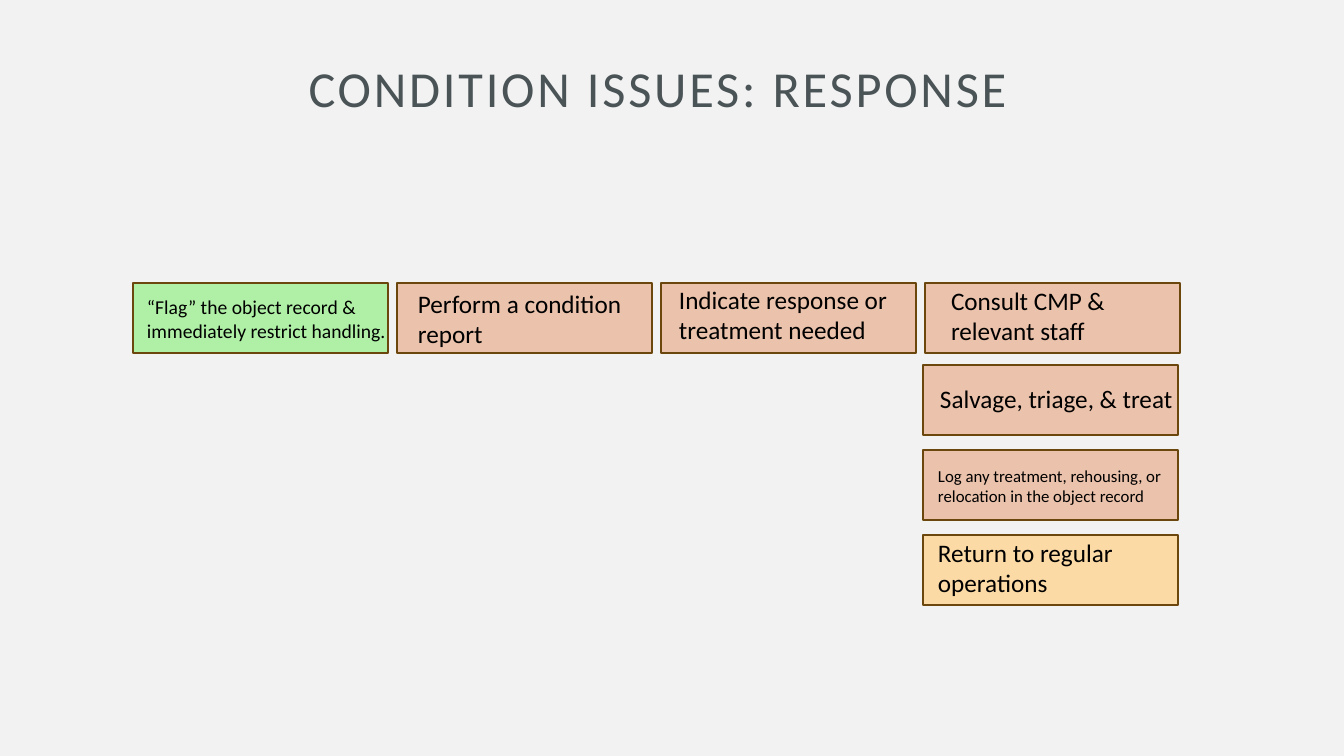
from dataclasses import dataclass

from pptx import Presentation
from pptx.dml.color import RGBColor
from pptx.enum.shapes import MSO_SHAPE
from pptx.enum.text import MSO_ANCHOR, MSO_AUTO_SIZE, PP_ALIGN
from pptx.util import Emu, Pt

RECT = MSO_SHAPE.RECTANGLE
TOP, MIDDLE = MSO_ANCHOR.TOP, MSO_ANCHOR.MIDDLE
LEFT, CENTER = PP_ALIGN.LEFT, PP_ALIGN.CENTER
NO_FIT, GROW = MSO_AUTO_SIZE.NONE, MSO_AUTO_SIZE.SHAPE_TO_FIT_TEXT
TITLE_ONLY = 5
EMU_PER_PX = 914400 / 100.8


@dataclass(frozen=True)
class Theme:
    font: str = "Calibri"
    background: str = "F2F2F2"
    title: str = "4A5356"
    text: str = "000000"
    line: str = "6C470D"
    flag: str = "AFF0A6"
    step: str = "EBC2AB"
    finish: str = "FBDAA5"
    title_size: int = 36
    body_size: int = 18
    note_size: int = 14
    small_size: int = 12


THEME = Theme()
STEP_W, STEP_H = 255, 70
ROW_PITCH, COLUMN_PITCH = 264, 85

# Each step: text, fill, type size, label box (dx, dy, width, height)
ROW_STEPS = [
    ("“Flag” the object record & immediately restrict handling.",
     THEME.flag, THEME.note_size, (4, 7, 269, 57)),
    ("Perform a condition report",
     THEME.step, THEME.body_size, (11, 0, 240, 72)),
    ("Indicate response or treatment needed",
     THEME.step, THEME.body_size, (8, -4, 269, 72)),
    ("Consult CMP & relevant staff",
     THEME.step, THEME.body_size, (16, -3, 206, 72)),
]
COLUMN_STEPS = [
    ("Salvage, triage, & treat",
     THEME.step, THEME.body_size, (7, 13, 269, 40)),
    ("Log any treatment, rehousing, or relocation in the object record",
     THEME.step, THEME.small_size, (5, 11, 251, 50)),
    ("Return to regular operations",
     THEME.finish, THEME.body_size, (5, -3, 232, 72)),
]


def px(n):
    return Emu(round(n * EMU_PER_PX))


def rgb(color):
    return RGBColor.from_string(color)


def write(sp, text, size=THEME.body_size, color=THEME.text, align=LEFT,
          anchor=TOP, fit=GROW, insets=(10, 5), line_spacing=None, tracking=None):
    tf = sp.text_frame
    tf.word_wrap = True
    tf.auto_size = fit
    tf.vertical_anchor = anchor
    tf.margin_left = tf.margin_right = px(insets[0])
    tf.margin_top = tf.margin_bottom = px(insets[1])
    p = tf.paragraphs[0]
    p.alignment = align
    if line_spacing:
        p.line_spacing = line_spacing
    r = p.add_run()
    r.text = text
    r.font.name = THEME.font
    r.font.size = Pt(size)
    r.font.color.rgb = rgb(color)
    if tracking:
        r.font._element.set("spc", str(tracking * 100))


def add_title(s, box, text):
    sp = s.shapes.title
    sp.left, sp.top, sp.width, sp.height = map(px, box)
    write(sp, text, size=THEME.title_size, color=THEME.title, align=CENTER,
          anchor=MIDDLE, fit=NO_FIT, insets=(20, 0), line_spacing=0.9, tracking=2)


def add_step(s, x, y, step):
    text, fill, size, (dx, dy, w, h) = step
    sp = s.shapes.add_shape(RECT, px(x), px(y), px(STEP_W), px(STEP_H))
    sp.shadow.inherit = False
    sp.fill.solid()
    sp.fill.fore_color.rgb = rgb(fill)
    sp.line.color.rgb = rgb(THEME.line)
    sp.line.width = Pt(1)
    label = s.shapes.add_textbox(px(x + dx), px(y + dy), px(w), px(h))
    write(label, text, size=size)


def add_steps(s, x, y, steps, pitch_x=0, pitch_y=0):
    for i, step in enumerate(steps):
        add_step(s, x + i * pitch_x, y + i * pitch_y, step)


def main():
    prs = Presentation()
    prs.slide_width, prs.slide_height = px(1344), px(756)
    s = prs.slides.add_slide(prs.slide_layouts[TITLE_ONLY])
    s.background.fill.solid()
    s.background.fill.fore_color.rgb = rgb(THEME.background)

    add_title(s, (89, 52, 1138, 78), "CONDITION ISSUES: RESPONSE")
    # Steps across, then down from the last one
    add_steps(s, 133, 283, ROW_STEPS, pitch_x=ROW_PITCH)
    add_steps(s, 923, 365, COLUMN_STEPS, pitch_y=COLUMN_PITCH)
    prs.save("out.pptx")


if __name__ == "__main__":
    main()
